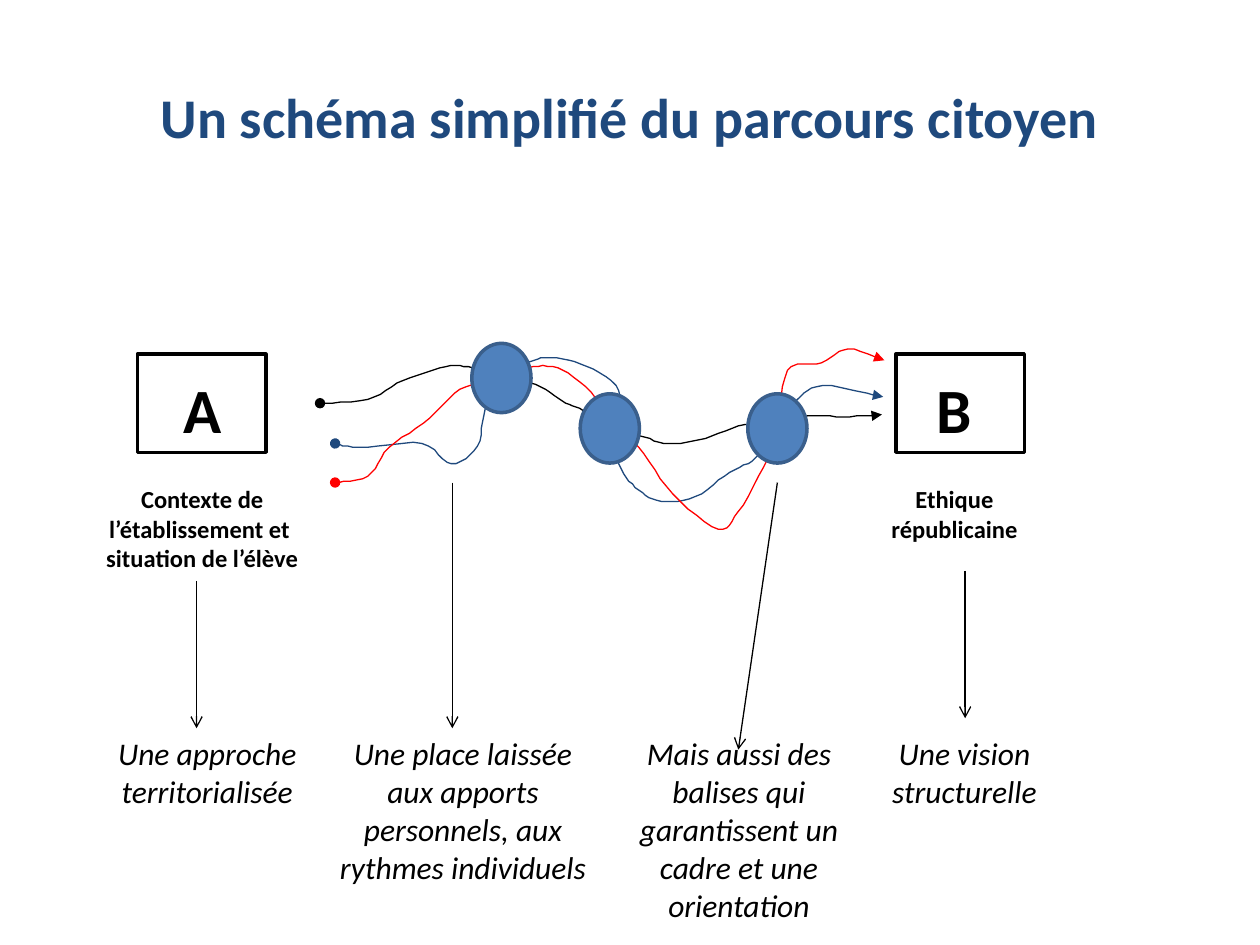
from lxml.etree import SubElement
from pptx import Presentation
from pptx.dml.color import RGBColor
from pptx.enum.shapes import MSO_CONNECTOR, MSO_SHAPE
from pptx.enum.text import MSO_ANCHOR, PP_ALIGN
from pptx.oxml.ns import qn
from pptx.util import Emu, Pt

SCALE = 9144  # EMU in one px, 100 px to the inch
FONT = "Calibri"
BLACK = RGBColor(0x00, 0x00, 0x00)
NAVY = RGBColor(0x1F, 0x49, 0x7D)
RED = RGBColor(0xFF, 0x00, 0x00)
BLUE = RGBColor(0x4F, 0x81, 0xBD)
EDGE = RGBColor(0x3A, 0x5F, 0x8C)

THIN, THICK = 0.75, 2  # points
STEPS = 6  # straight pieces drawn between two knots
DISC = (47, 55)
BOX = (102, 78)
BOX_TOP, NOTE_TOP, NOTE_WIDTH = 281, 578, 219

# Centres of the discs that every route passes through, in order.
STOPS = [(398, 300), (484, 340), (617, 340)]

# Colour, start, bends on the way to each stop and then to the end, end.
ROUTES = [
    (BLACK, (254, 320),
     [[(292, 317), (320, 302), (354, 291), (375, 292)],
      [(425, 305), (446, 318), (463, 326)],
      [(508, 346), (531, 352), (560, 348), (591, 337)],
      [(641, 330), (669, 331)]],
     (700, 329)),
    (NAVY, (266, 352),
     [[(285, 355), (335, 352), (358, 368), (379, 354), (385, 325)],
      [(421, 287), (438, 284), (466, 291), (491, 310)],
      [(493, 372), (507, 389), (525, 398), (552, 394), (579, 375),
       (600, 363)],
      [(633, 317), (653, 306)]],
     (701, 315)),
    (RED, (266, 383),
     [[(292, 378), (309, 355), (341, 332), (365, 309)],
      [(423, 291), (447, 294), (472, 315)],
      [(507, 355), (534, 392), (570, 420), (586, 406), (609, 365)],
      [(625, 294), (652, 288), (673, 277)]],
     (702, 286)),
]

# Letter, caption lines, left of the box, then the place of the text.
ENDS = [
    ("A", ["Contexte de l’établissement et ", "situation de l’élève"],
     109, (55, 289, 211, 151)),
    ("B", ["Ethique républicaine"], 711, (695, 289, 125, 128)),
]

# Text, left, height of each note, then tail and tip of its arrow.
NOTES = [
    ("Une approche territorialisée", 55, 70, (156, 461), (156, 578)),
    ("Une place laissée aux apports personnels, aux rythmes individuels",
     258, 130, (359, 383), (359, 578)),
    ("Mais aussi des balises qui garantissent un cadre et une orientation",
     477, 160, (617, 383), (586, 595)),
    ("Une vision structurelle", 656, 70, (766, 453), (766, 570)),
]


def emu(*lengths):
    return [Emu(n * SCALE) for n in lengths]


def join(start, legs, end):
    """Chain a route's bends with the stops between them."""
    knots = [start]
    for leg, goal in zip(legs, [*STOPS, end]):
        knots += [*leg, goal]
    return knots


def blend(a, b, c, d, t):
    """Catmull-Rom value at t, from b (t = 0) to c (t = 1)."""
    return (2 * b + (c - a) * t + (2 * a - 5 * b + 4 * c - d) * t ** 2
            + (3 * b - a - 3 * c + d) * t ** 3) / 2


def smooth(knots):
    """Return points on a curve that runs through all knots."""
    padded = [knots[0], *knots, knots[-1]]
    points = [knots[0]]
    for quad in zip(padded, padded[1:], padded[2:], padded[3:]):
        xs, ys = zip(*quad)
        for step in range(1, STEPS + 1):
            t = step / STEPS
            points.append((blend(*xs, t), blend(*ys, t)))
    return points


def write(frame, text, size=18, color=BLACK, bold=False, italic=False,
          before=0, new=False):
    """Write one centred paragraph, the first of the frame unless new."""
    para = frame.add_paragraph() if new else frame.paragraphs[0]
    para.alignment = PP_ALIGN.CENTER
    para.space_before = Pt(before)
    run = para.add_run()
    run.text = text
    font = run.font
    font.name, font.size = FONT, Pt(size)
    font.bold, font.italic = bold, italic
    font.color.rgb = color


class Board:
    """Holds the current slide and draws in the style of the scheme."""

    def __init__(self, deck):
        self.slide = deck.slides.add_slide(deck.slide_layouts[5])
        self.shapes = self.slide.shapes

    def stroke(self, shape, color, width, **ends):
        """Set the line; ends gives headEnd and tailEnd their kind."""
        shape.line.color.rgb = color
        shape.line.width = Pt(width)
        line = shape.element.spPr.find(qn("a:ln"))
        for end, kind in ends.items():
            SubElement(line, qn(f"a:{end}"), type=kind)

    def title(self, text, *box):
        head = self.shapes.title
        head.left, head.top, head.width, head.height = emu(*box)
        head.text_frame.vertical_anchor = MSO_ANCHOR.MIDDLE
        write(head.text_frame, text, size=32, color=NAVY, bold=True)

    def frame(self, *box):
        frame = self.shapes.add_textbox(*emu(*box)).text_frame
        frame.word_wrap = True
        return frame

    def label(self, letter, lines, box):
        """Write a big letter with its caption set apart below."""
        frame = self.frame(*box)
        write(frame, letter, size=36, bold=True)
        for i, line in enumerate(lines):
            write(frame, line, size=14, bold=True, new=True,
                  before=0 if i else 22)

    def note(self, text, left, height):
        frame = self.frame(left, NOTE_TOP, NOTE_WIDTH, height)
        write(frame, text, italic=True)

    def form(self, kind, *box, fill=None, color=BLACK):
        shape = self.shapes.add_shape(kind, *emu(*box))
        shape.shadow.inherit = False
        if fill is None:
            shape.fill.background()
        else:
            shape.fill.solid()
            shape.fill.fore_color.rgb = fill
        self.stroke(shape, color, THICK)

    def disc(self, x, y):
        wide, high = DISC
        self.form(MSO_SHAPE.OVAL, x - wide / 2, y - high / 2, wide, high,
                  fill=BLUE, color=EDGE)

    def trail(self, knots, color):
        first, *rest = smooth(knots)
        pen = self.shapes.build_freeform(*first, scale=SCALE)
        pen.add_line_segments(rest, close=False)
        shape = pen.convert_to_shape()
        shape.shadow.inherit = False
        shape.fill.background()
        self.stroke(shape, color, THIN, headEnd="oval", tailEnd="triangle")

    def arrow(self, tail, tip):
        line = self.shapes.add_connector(
            MSO_CONNECTOR.STRAIGHT, *emu(*tail, *tip))
        self.stroke(line, BLACK, THIN, tailEnd="arrow")
        SubElement(line.element.spPr, qn("a:effectLst"))


def main():
    deck = Presentation()
    deck.slide_width, deck.slide_height = emu(1000, 750)
    board = Board(deck)
    board.title("Un schéma simplifié du parcours citoyen", 50, 30, 900, 125)
    for letter, lines, left, place in ENDS:
        board.label(letter, lines, place)
        board.form(MSO_SHAPE.RECTANGLE, left, BOX_TOP, *BOX)
    for color, start, legs, end in ROUTES:
        board.trail(join(start, legs, end), color)
    for stop in STOPS:
        board.disc(*stop)
    for text, left, height, tail, tip in NOTES:
        board.arrow(tail, tip)
        board.note(text, left, height)
    deck.save("out.pptx")


if __name__ == "__main__":
    main()
